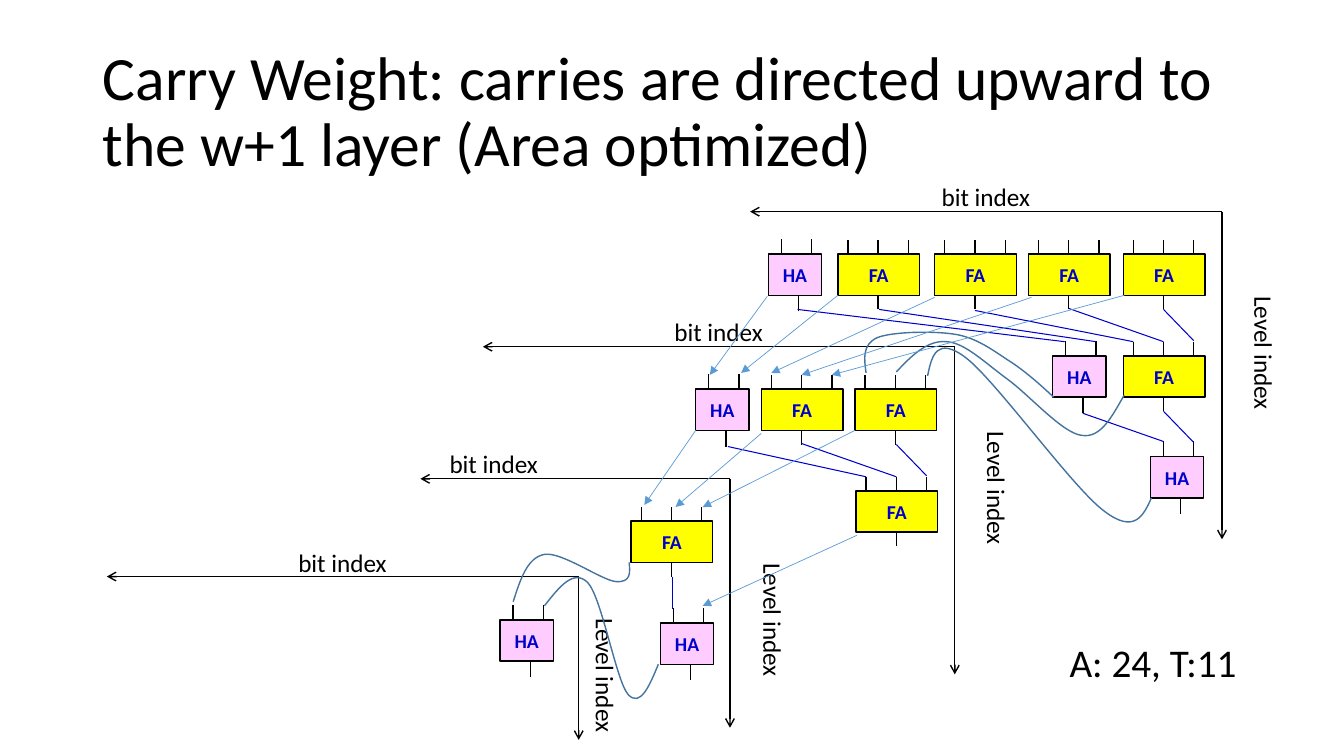
from dataclasses import dataclass

from lxml import etree
from pptx import Presentation
from pptx.dml.color import RGBColor
from pptx.enum import shapes, text
from pptx.oxml.ns import qn
from pptx.util import Emu, Pt

EMU_PER_PX = 9144  # 100 px to the inch
FONT = "Calibri"
BLACK, WIRE, CARRY, CURVE = "000000", "0000CC", "5B9BD5", "43739E"
CURVE_STEPS = 32

Point = tuple[int, int]


@dataclass(frozen=True)
class Link:
    start: Point
    end: Point


@dataclass(frozen=True)
class AdderKind:
    name: str
    width: int
    fill: str
    legs: tuple[Link, ...]  # relative to the top left corner of the box


@dataclass(frozen=True)
class Adder:
    kind: AdderKind
    left: int
    top: int


@dataclass(frozen=True)
class Axes:
    origin: Point
    left_end: int
    bottom_end: int
    bit_label: Point
    level_label: Point


ADDER_HEIGHT = 41
# The middle leg of a full adder runs behind its box, from output to input
FULL = AdderKind("FA", 81, "FFFF00", (
    Link((40, 55), (40, -14)), Link((10, 0), (10, -14)), Link((70, 0), (70, -14))))
HALF = AdderKind("HA", 53, "FFCCFF", (
    Link((13, 0), (13, -15)), Link((43, 0), (43, -15)), Link((30, 57), (30, 41))))

TOP_ADDERS = [
    *(Adder(FULL, left, 252) for left in (1114, 1020, 927, 831)),
    Adder(HALF, 762, 252),
    Adder(FULL, 1114, 353), Adder(HALF, 1044, 353), Adder(HALF, 1141, 453),
]
LOWER_ADDERS = [
    Adder(FULL, 848, 386), Adder(FULL, 755, 386), Adder(HALF, 690, 386),
    Adder(FULL, 849, 487),
    Adder(FULL, 626, 517), Adder(HALF, 655, 618), Adder(HALF, 496, 615),
]

AXES = [
    Axes((1212, 210), 744, 535, (924, 175), (1187, 331)),
    Axes((947, 344), 479, 669, (659, 309), (922, 465)),
    Axes((724, 475), 417, 722, (436, 440), (700, 596)),
    Axes((574, 572), 106, 734, (286, 538), (534, 651)),
]

SUM_WIRES = [
    Link((1154, 307), (1184, 338)), Link((1060, 306), (1154, 339)),
    Link((967, 308), (1124, 339)), Link((872, 307), (1087, 339)),
    Link((791, 307), (1056, 339)), Link((1154, 408), (1184, 439)),
    Link((1074, 410), (1154, 438)), Link((889, 441), (919, 472)),
    Link((795, 440), (889, 473)), Link((722, 443), (859, 473)),
    Link((667, 572), (667, 604)),
]

CARRY_ARROWS = [
    Link((1115, 293), (825, 372)), Link((1023, 295), (795, 372)),
    Link((927, 295), (765, 370)), Link((831, 293), (735, 370)),
    Link((761, 294), (704, 372)), Link((848, 427), (697, 503)),
    Link((755, 430), (670, 503)), Link((690, 427), (639, 501)),
    Link((850, 531), (697, 601)),
]

# Each curve is a start point, then three Bezier points per segment
CARRY_CURVES = [
    [(1142, 494), (1134, 512), (1125, 530), (1095, 507), (1064, 484),
     (988, 378), (958, 355), (929, 333), (924, 353), (920, 373)],
    [(1045, 394), (1032, 382), (1020, 371), (1004, 360), (988, 350),
     (971, 336), (949, 332), (927, 328), (885, 329), (870, 335),
     (855, 342), (857, 356), (859, 370)],
    [(1115, 392), (1103, 413), (1092, 435), (1073, 432), (1054, 430),
     (1021, 392), (999, 376), (977, 360), (957, 340), (939, 339),
     (920, 337), (904, 353), (889, 369)],
    [(653, 659), (644, 681), (635, 702), (623, 689), (611, 675),
     (597, 593), (583, 578), (569, 564), (555, 582), (540, 601)],
    [(624, 558), (625, 568), (626, 578), (611, 577), (597, 576),
     (557, 547), (540, 550), (523, 553), (516, 575), (509, 597)],
]


def px(value: float) -> Emu:
    return Emu(round(value * EMU_PER_PX))


def color(value: str) -> RGBColor:
    return RGBColor.from_string(value)


def set_attributes(target, values: dict) -> None:
    for name, value in values.items():
        setattr(target, name, value)


def write(shape, words: str, size: int, ink: str = BLACK, bold: bool = False,
          align=text.PP_ALIGN.LEFT, **frame_format) -> None:
    frame = shape.text_frame
    frame.text = words
    set_attributes(frame, frame_format)
    paragraph = frame.paragraphs[0]
    paragraph.alignment = align
    font = paragraph.runs[0].font
    set_attributes(font, {"name": FONT, "size": Pt(size), "bold": bold})
    font.color.rgb = color(ink)


def set_line(shape, ink: str, width: float) -> None:
    shape.line.color.rgb = color(ink)
    shape.line.width = Pt(width)


def add_line(slide, link: Link, ink: str = BLACK, width: float = 1,
             head: str = "") -> None:
    connector = slide.shapes.add_connector(
        shapes.MSO_CONNECTOR.STRAIGHT, *map(px, link.start + link.end))
    set_line(connector, ink, width)
    properties = connector._element.find(qn("p:spPr"))
    if head:
        etree.SubElement(properties.find(qn("a:ln")), qn("a:tailEnd"), type=head)
    etree.SubElement(properties, qn("a:effectLst"))


def add_label(slide, words: str, corner: Point, size: Point,
              points: int = 18, rotation: int = 0) -> None:
    label = slide.shapes.add_textbox(*map(px, corner + size))
    label.rotation = rotation
    write(label, words, points, word_wrap=False,
          auto_size=text.MSO_AUTO_SIZE.SHAPE_TO_FIT_TEXT)


def add_adder(slide, adder: Adder) -> None:
    kind, left, top = adder.kind, adder.left, adder.top
    for leg in kind.legs:
        start, end = ((left + x, top + y) for x, y in (leg.start, leg.end))
        add_line(slide, Link(start, end))
    box = slide.shapes.add_shape(
        shapes.MSO_SHAPE.RECTANGLE, *map(px, (left, top, kind.width, ADDER_HEIGHT)))
    box.shadow.inherit = False
    box.fill.solid()
    box.fill.fore_color.rgb = color(kind.fill)
    set_line(box, BLACK, 1)
    write(box, kind.name, 14, WIRE, True, text.PP_ALIGN.CENTER,
          margin_left=0, margin_right=0, vertical_anchor=text.MSO_ANCHOR.MIDDLE)


def add_axes(slide, axes: Axes) -> None:
    x, y = axes.origin
    add_line(slide, Link(axes.origin, (axes.left_end, y)), head="arrow")
    add_label(slide, "bit index", axes.bit_label, (115, 40))
    add_label(slide, "Level index", axes.level_label, (134, 40), rotation=90)
    add_line(slide, Link(axes.origin, (x, axes.bottom_end)), head="arrow")


def bezier(points: list[Point], t: float) -> tuple[float, ...]:
    weights = ((1 - t) ** 3, 3 * t * (1 - t) ** 2, 3 * t * t * (1 - t), t ** 3)
    return tuple(sum(w * v for w, v in zip(weights, values))
                 for values in zip(*points))


def add_curve(slide, points: list[Point]) -> None:
    builder = slide.shapes.build_freeform(*map(px, points[0]))
    builder.add_line_segments([tuple(map(px, p)) for p in points[3::3]], close=False)
    curve = builder.convert_to_shape()
    curve.shadow.inherit = False
    curve.fill.background()
    set_line(curve, CURVE, 1)

    # Fit the frame to the extent of the curve
    traced = [bezier(points[first:first + 4], step / CURVE_STEPS)
              for first in range(0, len(points) - 1, 3)
              for step in range(CURVE_STEPS + 1)]
    (left, right), (top, bottom) = ((min(v), max(v)) for v in zip(*traced))
    width, height = px(right - left), px(bottom - top)
    set_attributes(curve, {"left": px(left), "top": px(top),
                           "width": width, "height": height})

    # Replace the straight segments with Bezier segments
    outline = next(curve._element.iter(qn("a:path")))
    for command in list(outline):
        outline.remove(command)
    outline.set("w", str(width))
    outline.set("h", str(height))
    groups = [("a:moveTo", points[:1])]
    groups += [("a:cubicBezTo", points[i:i + 3]) for i in range(1, len(points), 3)]
    for tag, group in groups:
        command = etree.SubElement(outline, qn(tag))
        for x, y in group:
            etree.SubElement(command, qn("a:pt"), x=str(px(x - left)), y=str(px(y - top)))


def main() -> None:
    presentation = Presentation()
    set_attributes(presentation, {"slide_width": px(1333), "slide_height": px(750)})
    slide = presentation.slides.add_slide(presentation.slide_layouts[5])

    # Title
    title = slide.shapes.title
    set_attributes(title, {"left": px(92), "top": px(40),
                           "width": px(1150), "height": px(145)})
    write(title, "Carry Weight: carries are directed upward to the w+1 layer "
          "(Area optimized)", 44, word_wrap=True,
          auto_size=text.MSO_AUTO_SIZE.NONE, vertical_anchor=text.MSO_ANCHOR.MIDDLE)
    title.text_frame.paragraphs[0].line_spacing = 0.9

    # Adder trees and their axes
    for adder in TOP_ADDERS + LOWER_ADDERS:
        add_adder(slide, adder)
    for axes in AXES:
        add_axes(slide, axes)

    # Sums within a weight, carries to the next one
    for wire in SUM_WIRES:
        add_line(slide, wire, WIRE, 0.75)
    for curve in CARRY_CURVES:
        add_curve(slide, curve)
    for arrow in CARRY_ARROWS:
        add_line(slide, arrow, CARRY, 0.5, "triangle")

    # Cost summary
    add_label(slide, "A: 24, T:11", (1051, 628), (188, 57), 28)
    presentation.save("out.pptx")


if __name__ == "__main__":
    main()
